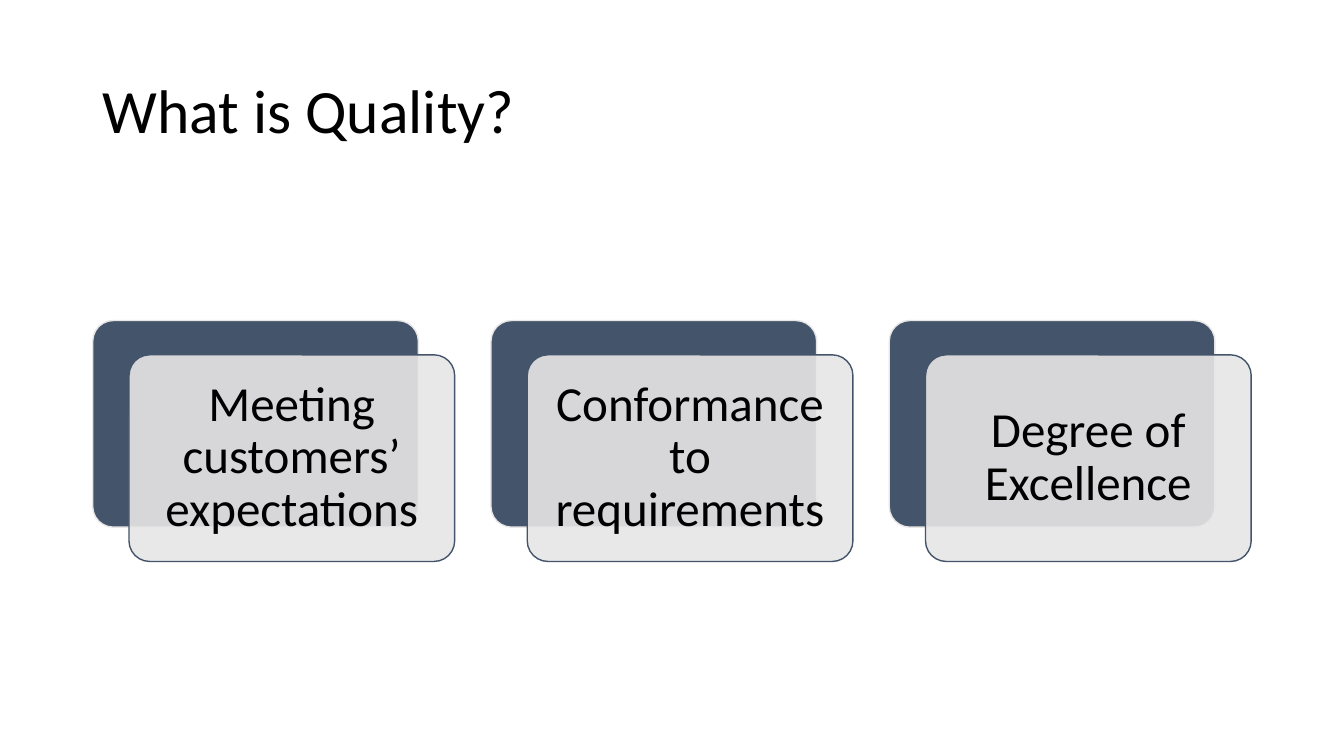
from dataclasses import dataclass

from lxml import etree
from pptx import Presentation
from pptx.dml.color import RGBColor
from pptx.enum.shapes import MSO_SHAPE
from pptx.enum.text import MSO_ANCHOR, PP_ALIGN
from pptx.oxml.ns import qn
from pptx.util import Inches, Pt

ROUNDED = MSO_SHAPE.ROUNDED_RECTANGLE
MIDDLE = MSO_ANCHOR.MIDDLE
LEFT, CENTER = PP_ALIGN.LEFT, PP_ALIGN.CENTER


@dataclass(frozen=True)
class Theme:
    font: str = "Calibri"
    title_size: int = 44
    card_size: int = 35
    text: RGBColor = RGBColor(0x00, 0x00, 0x00)
    dark: RGBColor = RGBColor(0x44, 0x54, 0x6A)
    light: RGBColor = RGBColor(0xE7, 0xE6, 0xE6)


THEME = Theme()


def write_text(text_frame, text, size, alignment):
    text_frame.word_wrap = True
    text_frame.vertical_anchor = MIDDLE
    paragraph = text_frame.paragraphs[0]
    paragraph.alignment = alignment
    paragraph.line_spacing = 0.9
    run = paragraph.add_run()
    run.text = text
    run.font.name = THEME.font
    run.font.size = Pt(size)
    run.font.color.rgb = THEME.text


def add_panel(slide, left, top, fill, line):
    panel = slide.shapes.add_shape(
        ROUNDED, Inches(left), Inches(top), Inches(3.23), Inches(2.05))
    panel.adjustments[0] = 0.1
    panel.shadow.inherit = False
    panel.fill.solid()
    panel.fill.fore_color.rgb = fill
    panel.line.color.rgb = line
    panel.line.width = Pt(1)
    return panel


presentation = Presentation()
presentation.slide_width = Inches(13.33)
presentation.slide_height = Inches(7.5)
slide = presentation.slides.add_slide(presentation.slide_layouts[5])

# Title
title = slide.shapes.title
title.left, title.top = Inches(0.92), Inches(0.4)
title.width, title.height = Inches(11.5), Inches(1.45)
write_text(title.text_frame, "What is Quality?", THEME.title_size, LEFT)

# Definitions: a dark panel behind a translucent light one
definitions = [
    "Meeting customers’ expectations",
    "Conformance to requirements",
    "Degree of Excellence",
]
for index, definition in enumerate(definitions):
    left = 0.92 + index * 3.95
    add_panel(slide, left, 3.18, THEME.dark, THEME.light)
    front = add_panel(slide, left + 0.36, 3.52, THEME.light, THEME.dark)
    fill_color = front.fill._xPr.find(qn("a:solidFill"))[0]
    etree.SubElement(fill_color, qn("a:alpha"), val="90000")

    text_frame = front.text_frame
    text_frame.margin_left = text_frame.margin_right = Inches(0.15)
    text_frame.margin_top = text_frame.margin_bottom = Inches(0.15)
    write_text(text_frame, definition, THEME.card_size, CENTER)

presentation.save("out.pptx")
